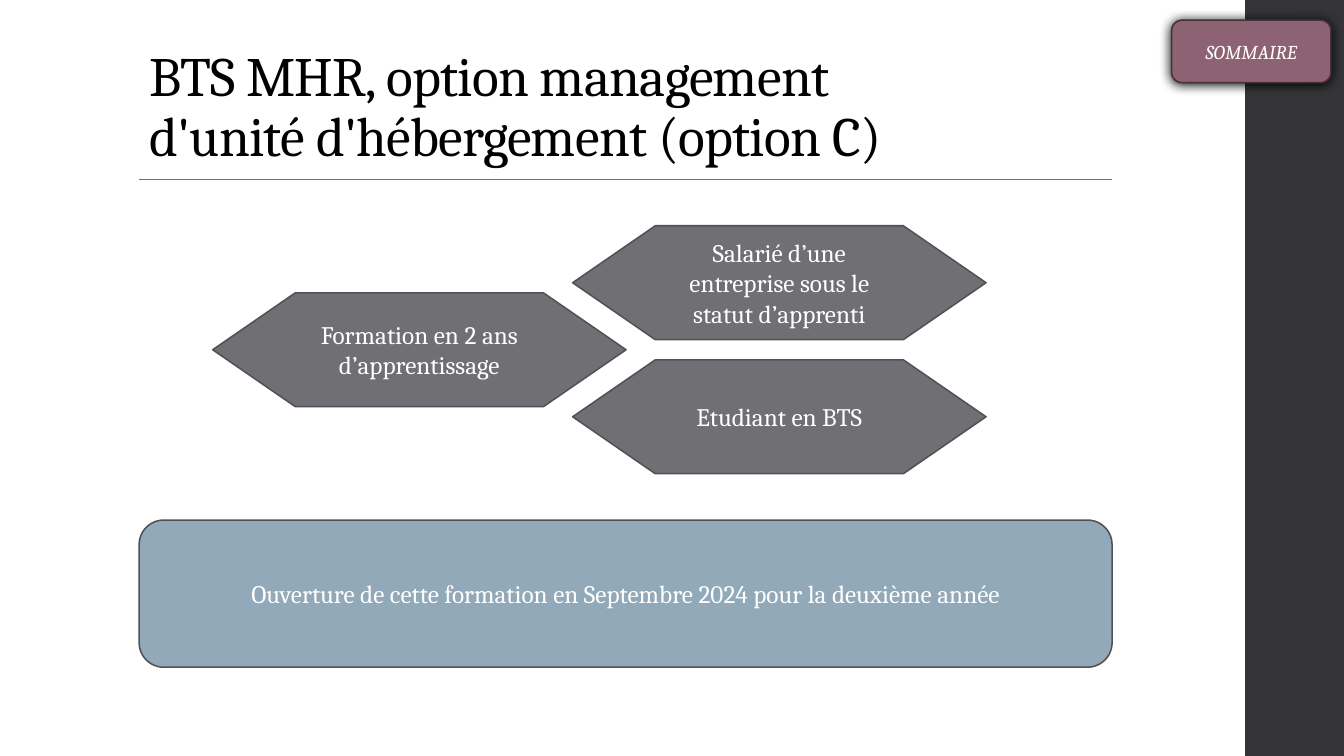
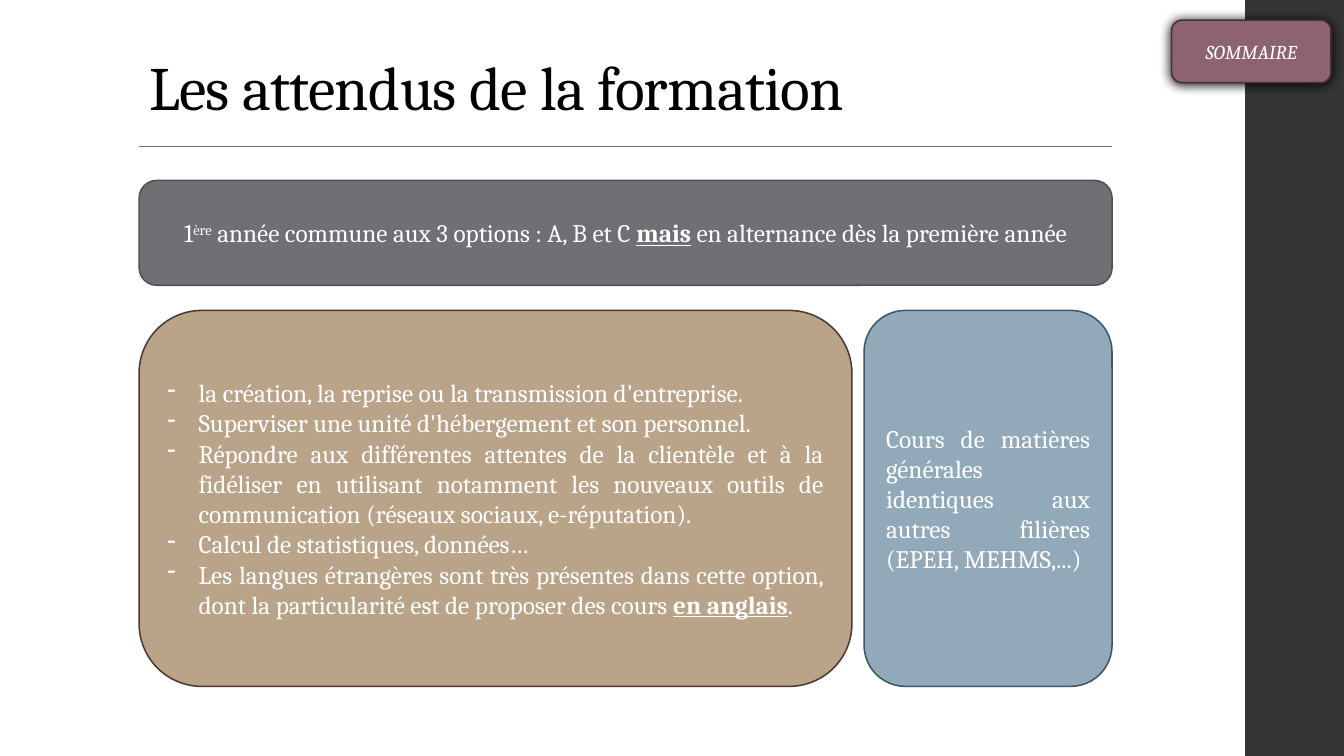
from lxml.etree import SubElement
from pptx import Presentation
from pptx.dml.color import RGBColor
from pptx.enum.shapes import MSO_CONNECTOR, MSO_SHAPE
from pptx.enum.text import MSO_ANCHOR, PP_ALIGN
from pptx.oxml.ns import qn
from pptx.util import Inches, Pt

FONT = "Cambria"
WHITE = RGBColor(0xFF, 0xFF, 0xFF)
BLACK = RGBColor(0x00, 0x00, 0x00)
CHARCOAL = RGBColor(0x35, 0x35, 0x37)
GREY = RGBColor(0x6F, 0x6F, 0x74)
GREY_EDGE = RGBColor(0x52, 0x52, 0x56)
BLUE = RGBColor(0x92, 0xA9, 0xB9)
BLUE_EDGE = RGBColor(0x41, 0x56, 0x65)
SAND = RGBColor(0xB9, 0xA4, 0x89)
SAND_EDGE = RGBColor(0x4E, 0x3A, 0x31)
PLUM = RGBColor(0x8D, 0x63, 0x74)
PLUM_EDGE = RGBColor(0x46, 0x31, 0x3A)

SLIDE_W, SLIDE_H = 13.33, 7.5
BAND_LEFT = 12.35
LEFT, CONTENT_W = 1.38, 9.65
TITLE_TOP = 0.4
STRONG = {"bold": True, "underline": True}


def add_run(paragraph, text, size=18, color=WHITE, bold=False, italic=False,
            underline=False, superscript=False):
    run = paragraph.add_run()
    run.text = text
    font = run.font
    font.name, font.size, font.color.rgb = FONT, Pt(size), color
    font.bold, font.italic, font.underline = bold, italic, underline
    if superscript:
        run._r.get_or_add_rPr().set("baseline", "30000")
    return run


def add_dash(paragraph):
    """Give the paragraph a dash bullet with a hanging indent."""
    props = paragraph._p.get_or_add_pPr()
    indent = Inches(0.31)
    props.set("marL", str(indent))
    props.set("indent", str(-indent))
    SubElement(props, qn("a:buChar")).set("char", "-")


def add_box(slide, kind, place, fill, edge=None, paragraphs=(),
            align=PP_ALIGN.CENTER, dashes=False):
    """Each paragraph is a list of (text, run options) pairs."""
    box = slide.shapes.add_shape(kind, *map(Inches, place))
    box.shadow.inherit = False
    box.fill.solid()
    box.fill.fore_color.rgb = fill
    if edge is None:
        box.line.fill.background()
    else:
        box.line.color.rgb = edge
        box.line.width = Pt(1.1)
    frame = box.text_frame
    frame.word_wrap = True
    frame.vertical_anchor = MSO_ANCHOR.MIDDLE
    for index, runs in enumerate(paragraphs):
        paragraph = frame.add_paragraph() if index else frame.paragraphs[0]
        paragraph.alignment = align
        if dashes:
            add_dash(paragraph)
        for text, options in runs:
            add_run(paragraph, text, **options)
    return box


def add_title(slide, lines, size, height):
    title = slide.shapes.add_textbox(
        Inches(LEFT), Inches(TITLE_TOP), Inches(10.6), Inches(height))
    frame = title.text_frame
    frame.word_wrap = True
    frame.vertical_anchor = MSO_ANCHOR.BOTTOM
    paragraph = frame.paragraphs[0]
    paragraph.line_spacing = 0.9
    for index, line in enumerate(lines):
        if index:
            paragraph.add_line_break()
        run = add_run(paragraph, line, size, BLACK)
        run._r.get_or_add_rPr().set("spc", "-50")


def add_rule(slide, top):
    rule = slide.shapes.add_connector(
        MSO_CONNECTOR.STRAIGHT, Inches(LEFT), Inches(top),
        Inches(LEFT + CONTENT_W), Inches(top))
    rule.line.color.rgb = GREY
    rule.line.width = Pt(0.75)
    SubElement(rule._element.spPr, qn("a:effectLst"))


def add_summary_button(slide):
    button = add_box(slide, MSO_SHAPE.ROUNDED_RECTANGLE, (11.62, 0.2, 1.58, 0.62),
                     PLUM, PLUM_EDGE, [[("SOMMAIRE", {"size": 14, "italic": True})]])
    effects = button._element.spPr.find(qn("a:effectLst"))
    shadow = SubElement(effects, qn("a:outerShdw"), blurRad=str(Pt(8.5)),
                        dist=str(Pt(1)), dir="5400000", algn="ctr", rotWithShape="0")
    SubElement(shadow, qn("a:srgbClr"), val=str(BLACK))


def add_slide(deck, title_lines, title_size, title_height, rule_top):
    """Add a slide with the side band, title, rule and summary button."""
    slide = deck.slides.add_slide(deck.slide_layouts[6])
    add_box(slide, MSO_SHAPE.RECTANGLE,
            (BAND_LEFT, 0, SLIDE_W - BAND_LEFT, SLIDE_H), CHARCOAL)
    add_title(slide, title_lines, title_size, title_height)
    add_rule(slide, rule_top)
    add_summary_button(slide)
    return slide


def build_option(deck):
    slide = add_slide(
        deck, ["BTS MHR, option management ", "d'unité d'hébergement (option C)"],
        39.6, 1.32, 1.78)
    left, top, column_step, row_step = 2.11, 2.24, 3.57, 1.33
    hexagons = [
        (0, 0.5, "Formation en 2 ans d’apprentissage"),
        (1, 0, "Salarié d’une entreprise sous le statut d’apprenti"),
        (1, 1, "Etudiant en BTS"),
    ]
    for column, row, text in hexagons:
        place = (left + column * column_step, top + row * row_step, 4.1, 1.13)
        add_box(slide, MSO_SHAPE.FLOWCHART_PREPARATION, place,
                GREY, GREY_EDGE, [[(text, {})]])
    opening = "Ouverture de cette formation en Septembre 2024 pour la deuxième année"
    add_box(slide, MSO_SHAPE.ROUNDED_RECTANGLE, (LEFT, 5.16, CONTENT_W, 1.46),
            BLUE, GREY_EDGE, [[(opening, {})]])


def build_expectations(deck):
    slide = add_slide(deck, ["Les attendus de la formation"], 44, 0.88, 1.45)
    rounded = MSO_SHAPE.ROUNDED_RECTANGLE
    first_year = [
        ("1", {}),
        ("ère", {"superscript": True}),
        (" année commune aux 3 options : A, B et C ", {}),
        ("mais", STRONG),
        (" en alternance dès la première année", {}),
    ]
    add_box(slide, rounded, (LEFT, 1.79, CONTENT_W, 1.04),
            GREY, GREY_EDGE, [first_year])

    skills = [
        [("la création, la reprise ou la transmission d'entreprise. ", {})],
        [("Superviser une unité d'hébergement et son personnel.", {})],
        [("Répondre aux différentes attentes de la clientèle et à la fidéliser "
          "en utilisant notamment les nouveaux outils de communication "
          "(réseaux sociaux, e-réputation).", {})],
        [("Calcul de statistiques, données…", {})],
        [("Les langues étrangères sont très présentes dans cette option, dont la "
          "particularité est de proposer des cours ", {}),
         ("en anglais", STRONG),
         (".", {})],
    ]
    general = ("Cours de matières générales identiques aux autres filières "
               "(EPEH, MEHMS,...)")
    top, height, skills_w, general_w = 3.08, 3.73, 7.07, 2.46
    add_box(slide, rounded, (LEFT, top, skills_w, height),
            SAND, SAND_EDGE, skills, PP_ALIGN.JUSTIFY, dashes=True)
    add_box(slide, rounded, (LEFT + CONTENT_W - general_w, top, general_w, height),
            BLUE, BLUE_EDGE, [[(general, {})]], PP_ALIGN.JUSTIFY)


def main():
    deck = Presentation()
    deck.slide_width, deck.slide_height = Inches(SLIDE_W), Inches(SLIDE_H)
    build_option(deck)
    build_expectations(deck)
    deck.save("out.pptx")


if __name__ == "__main__":
    main()
